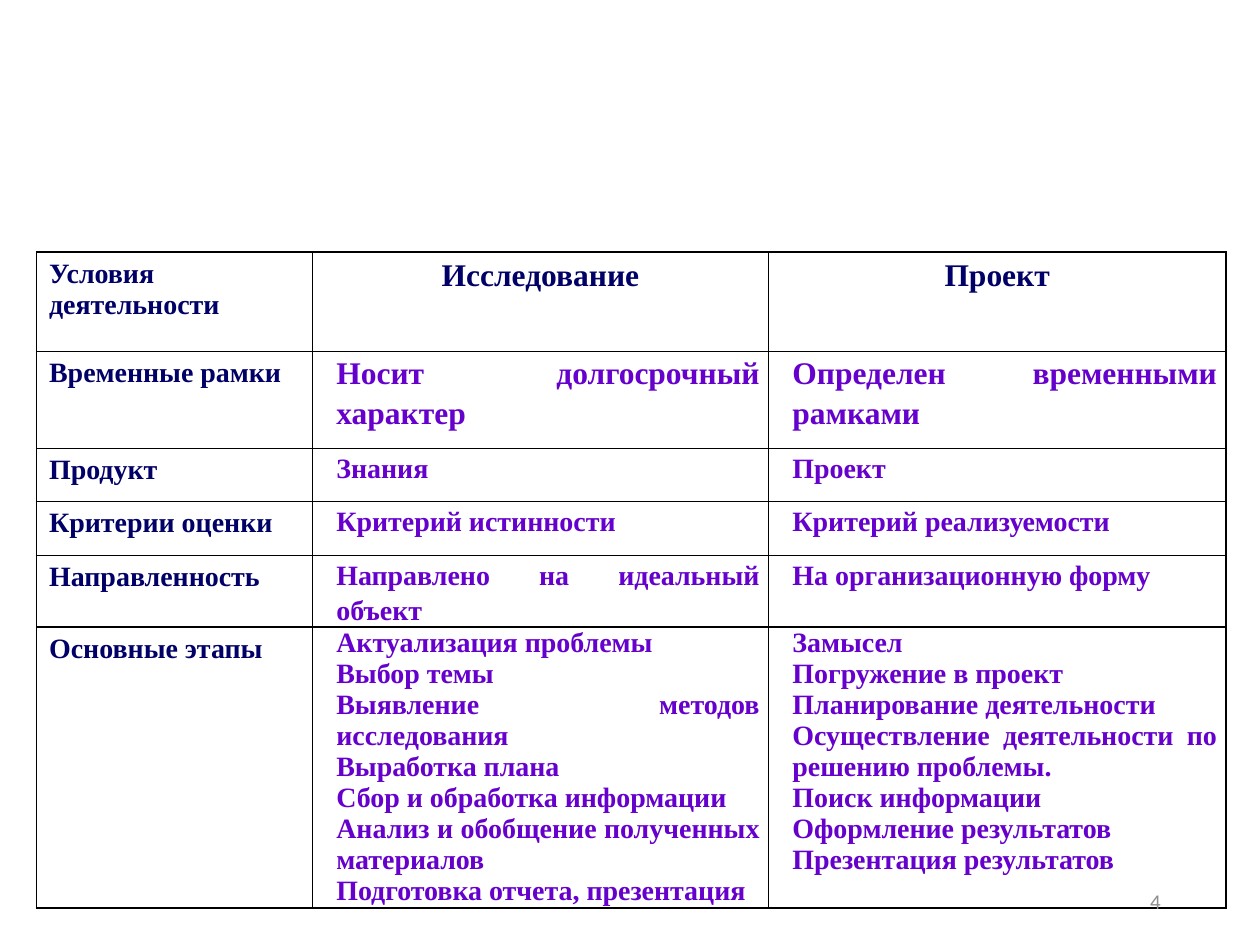
from lxml.etree import SubElement
from pptx import Presentation
from pptx.dml.color import RGBColor
from pptx.enum.text import MSO_ANCHOR as Anchor, PP_ALIGN as Align
from pptx.oxml.ns import qn
from pptx.util import Inches, Pt

NAVY = RGBColor(0x00, 0x00, 0x66)
VIOLET = RGBColor(0x66, 0x00, 0xCC)
GRAY = RGBColor(0x8C, 0x8C, 0x8C)
SERIF = "Times New Roman"

# Content: each cell is a list of paragraphs
ROWS = [
    (["Условия деятельности"], ["Исследование"], ["Проект"]),
    (["Временные рамки"], ["Носит долгосрочный характер"],
     ["Определен временными рамками"]),
    (["Продукт"], ["Знания"], ["Проект"]),
    (["Критерии оценки"], ["Критерий истинности"], ["Критерий реализуемости"]),
    (["Направленность"], ["Направлено на идеальный объект"],
     ["На организационную форму"]),
    (["Основные этапы"],
     ["Актуализация проблемы", "Выбор темы", "Выявление методов исследования",
      "Выработка плана", "Сбор и обработка информации",
      "Анализ и обобщение полученных материалов",
      "Подготовка отчета, презентация"],
     ["Замысел", "Погружение в проект", "Планирование деятельности",
      "Осуществление деятельности по решению проблемы.",
      "Поиск информации", "Оформление результатов",
      "Презентация результатов"]),
]
WIDTHS = [2.19, 3.62, 3.63]
HEIGHTS = [0.79, 0.77, 0.42, 0.43, 0.54, 2.23]
INSETS = {"margin_left": Inches(0.07), "margin_right": Inches(0.07),
          "margin_top": 0, "margin_bottom": 0}


def style(font, **values):
    color = values.pop("color")
    for key, value in values.items():
        setattr(font, key, value)
    font.color.rgb = color


def add_edges(cell):
    props = cell._tc.get_or_add_tcPr()
    for i, side in enumerate(("lnL", "lnR", "lnT", "lnB")):
        line = SubElement(props, qn(f"a:{side}"), w=str(Pt(1)))
        fill = SubElement(line, qn("a:solidFill"))
        SubElement(fill, qn("a:srgbClr"), val="000000")
        props.insert(i, line)


def fill_cell(cell, lines, row, col):
    body = row > 0 and col > 0
    cell.fill.background()
    add_edges(cell)
    if body:
        for key, value in INSETS.items():
            setattr(cell, key, value)
    cell.text = "\n".join(lines)
    for para in cell.text_frame.paragraphs:
        if body:
            para.alignment = Align.JUSTIFY
            props = para._p.get_or_add_pPr()
            props.set("marL", str(Inches(0.12)))
            props.set("indent", "0")
            if row < len(ROWS) - 1:
                para.line_spacing = 1.15
        elif col > 0:
            para.alignment = Align.CENTER
        size = 18 if col > 0 and row < 2 else 16
        style(para.runs[0].font, name=SERIF, size=Pt(size), bold=True,
              color=VIOLET if body else NAVY)


deck = Presentation()
deck.slide_width, deck.slide_height = Inches(10), Inches(7.5)
slide = deck.slides.add_slide(deck.slide_layouts[6])

# Comparison table
table = slide.shapes.add_table(
    len(ROWS), len(WIDTHS), Inches(0.29), Inches(2),
    Inches(sum(WIDTHS)), Inches(sum(HEIGHTS))).table
table.first_row = table.horz_banding = False
for column, width in zip(table.columns, WIDTHS):
    column.width = Inches(width)
for line, height in zip(table.rows, HEIGHTS):
    line.height = Inches(height)
for r, row in enumerate(ROWS):
    for c, lines in enumerate(row):
        fill_cell(table.cell(r, c), lines, r, c)

# Page number
frame = slide.shapes.add_textbox(
    Inches(7.06), Inches(6.95), Inches(2.25), Inches(0.4)).text_frame
frame.word_wrap = True
frame.vertical_anchor = Anchor.MIDDLE
para = frame.paragraphs[0]
para.alignment = Align.RIGHT
run = para.add_run()
run.text = "4"
style(run.font, name="Calibri", size=Pt(12), color=GRAY)

deck.save("out.pptx")
